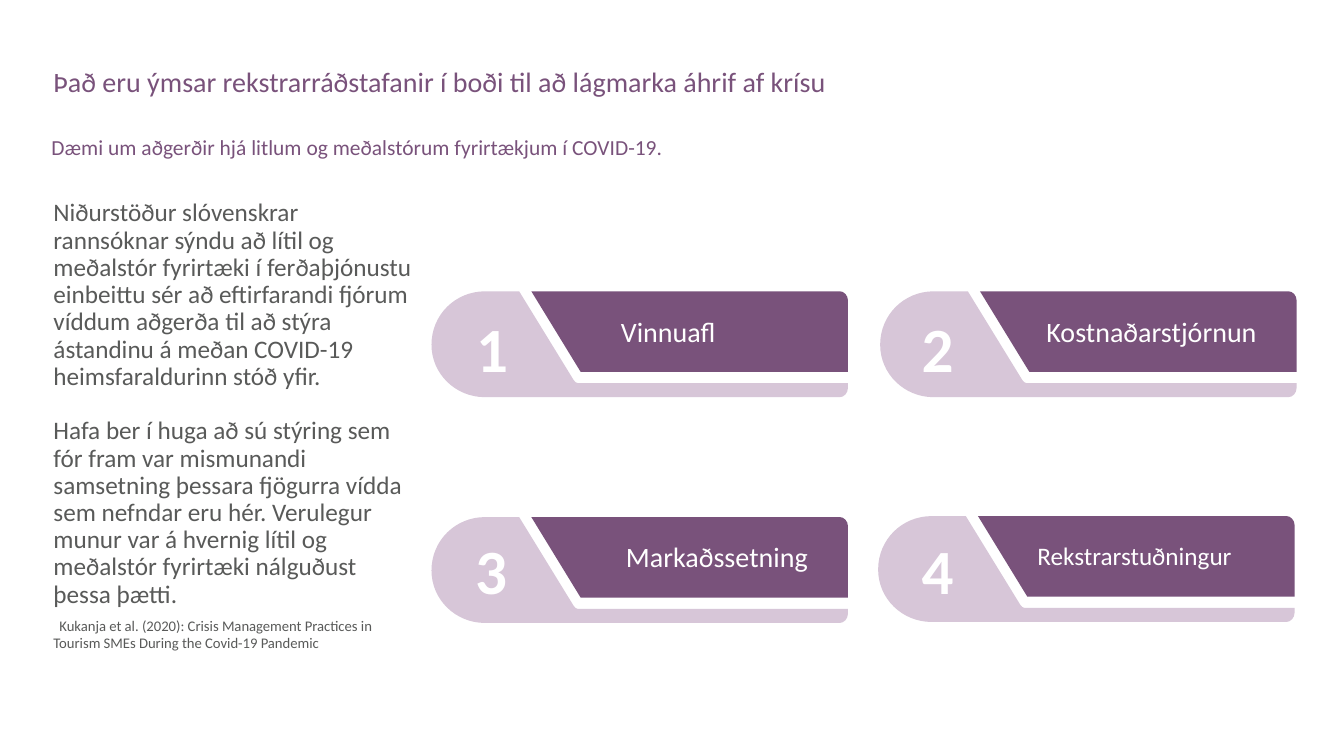
from dataclasses import dataclass

from pptx import Presentation
from pptx.dml.color import RGBColor
from pptx.enum.text import MSO_ANCHOR, MSO_AUTO_SIZE, PP_ALIGN
from pptx.oxml.ns import qn
from pptx.util import Inches, Pt

TOP = MSO_ANCHOR.TOP
MIDDLE = MSO_ANCHOR.MIDDLE
LEFT = PP_ALIGN.LEFT
CENTER = PP_ALIGN.CENTER
NO_FIT = MSO_AUTO_SIZE.NONE
TWO_CONTENT = 3


@dataclass(frozen=True)
class Theme:
    font: str = "Calibri"
    plum: RGBColor = RGBColor(0x79, 0x52, 0x7B)
    lilac: RGBColor = RGBColor(0xD7, 0xC6, 0xD8)
    gray: RGBColor = RGBColor(0x59, 0x5A, 0x59)
    white: RGBColor = RGBColor(0xFF, 0xFF, 0xFF)
    title: float = 20
    lead: float = 15.3
    body: float = 18
    source: float = 10.5
    digit: float = 45
    label: float = 20
    small: float = 18


THEME = Theme()

TITLE = "Það eru ýmsar rekstrarráðstafanir í boði til að lágmarka áhrif af krísu"
LEAD = "Dæmi um aðgerðir hjá litlum og meðalstórum fyrirtækjum í COVID-19."
BODY = [
    "Niðurstöður slóvenskrar rannsóknar sýndu að lítil og meðalstór fyrirtæki "
    "í ferðaþjónustu einbeittu sér að eftirfarandi fjórum víddum aðgerða til "
    "að stýra ástandinu á meðan COVID-19 heimsfaraldurinn stóð yfir.",
    "Hafa ber í huga að sú stýring sem fór fram var mismunandi samsetning "
    "þessara fjögurra vídda sem nefndar eru hér. Verulegur munur var á hvernig "
    "lítil og meðalstór fyrirtæki nálguðust þessa þætti.",
]
SOURCE = (
    "Kukanja et al. (2020): Crisis Management Practices in "
    "Tourism SMEs During the Covid-19 Pandemic"
)
CARDS = [
    ("Vinnuafl", (4.28, 2.89), (4.62, 3.02), (6.06, 3.07), THEME.label),
    ("Kostnaðarstjórnun", (8.73, 2.89), (9.04, 3.02), (10.28, 3.07), THEME.label),
    ("Markaðssetning", (4.28, 5.13), (4.61, 5.22), (6.11, 5.3), THEME.label),
    ("Rekstrarstuðningur", (8.71, 5.12), (9.04, 5.22), (10.19, 5.31), THEME.small),
]
BASE = [
    [(1.45, 0.91)],
    [(1.44, 0.91), (1.42, 0.9), (1.41, 0.88)],
    [(0.87, 0)],
    [(0.53, 0)],
    [(0.24, 0), (0, 0.23), (0, 0.53)],
    [(0, 0.82), (0.24, 1.05), (0.53, 1.05)],
    [(4.05, 1.05)],
    [(4.09, 1.05), (4.13, 1.01), (4.13, 0.96)],
    [(4.13, 0.91)],
]
TAB = [
    [(1.48, 0.8)],
    [(4.13, 0.8)],
    [(4.13, 0.09)],
    [(4.13, 0.04), (4.09, 0), (4.05, 0)],
    [(0.99, 0)],
]


def place(shape, left, top, width, height):
    shape.left, shape.top = Inches(left), Inches(top)
    shape.width, shape.height = Inches(width), Inches(height)


def write(para, text, size, color, bold=False, align=LEFT):
    para.alignment = align
    run = para.add_run()
    run.text = text
    run.font.name = THEME.font
    run.font.size = Pt(size)
    run.font.bold = bold
    run.font.color.rgb = color


def plain(para, line, before=0, indent=0):
    props = para._p.get_or_add_pPr()
    props.set("marL", "0")
    props.set("indent", str(Inches(indent)))
    props.append(props.makeelement(qn("a:buNone"), {}))
    para.line_spacing = line
    para.space_before = Pt(before)


def set_frame(shape, anchor):
    frame = shape.text_frame
    frame.word_wrap = True
    frame.auto_size = NO_FIT
    frame.vertical_anchor = anchor
    return frame


def add_head(shape, box, text, size, line):
    place(shape, *box)
    para = set_frame(shape, TOP).paragraphs[0]
    plain(para, line)
    write(para, text, size, THEME.plum)


def add_body(shape):
    place(shape, 0.43, 1.79, 3.83, 4.87)
    frame = set_frame(shape, MIDDLE)
    first = frame.paragraphs[0]
    plain(first, 0.9)
    write(first, BODY[0], THEME.body, THEME.gray)
    second = frame.add_paragraph()
    plain(second, 0.9, before=19.5)
    write(second, BODY[1], THEME.body, THEME.gray)
    cite = frame.add_paragraph()
    plain(cite, 1, before=5.5, indent=0.06)
    write(cite, SOURCE, THEME.source, THEME.gray)


def add_text(slide, box, text, size, bold=False, align=LEFT):
    shape = slide.shapes.add_textbox(*map(Inches, box))
    frame = set_frame(shape, TOP)
    write(frame.paragraphs[0], text, size, THEME.white, bold, align)


def bend(shape, steps):
    lines = iter(list(shape._element.iter(qn("a:lnTo"))))
    for step in steps:
        group = [next(lines) for _ in step]
        if len(group) == 3:
            curve = group[0].makeelement(qn("a:cubicBezTo"), {})
            group[0].addprevious(curve)
            for line in group:
                curve.append(line[0])
                line.getparent().remove(line)


def add_form(slide, corner, steps, color):
    left, top = corner
    spots = [(Inches(left + x), Inches(top + y)) for step in steps for x, y in step]
    form = slide.shapes.build_freeform(*spots[0])
    form.add_line_segments(spots[1:], close=True)
    shape = form.convert_to_shape()
    bend(shape, steps[1:])
    shape.shadow.inherit = False
    shape.fill.solid()
    shape.fill.fore_color.rgb = color
    shape.line.fill.background()


def add_card(slide, number, label, corner, digit, spot, size):
    add_form(slide, corner, BASE, THEME.lilac)
    add_form(slide, corner, TAB, THEME.plum)
    add_text(slide, (*digit, 0.52, 0.86), str(number), THEME.digit, True, CENTER)
    add_text(slide, (*spot, 2.69, 0.44), label, size)


def main():
    deck = Presentation()
    deck.slide_width, deck.slide_height = Inches(13.33), Inches(7.5)
    slide = deck.slides.add_slide(deck.slide_layouts[TWO_CONTENT])
    title, body, lead = list(slide.placeholders)[:3]
    add_head(title, (0.43, 0.63, 12.54, 0.64), TITLE, THEME.title, 0.9)
    add_head(lead, (0.41, 1.35, 12.56, 0.28), LEAD, THEME.lead, 0.7)
    add_body(body)
    for number, card in enumerate(CARDS, 1):
        add_card(slide, number, *card)
    deck.save("out.pptx")


if __name__ == "__main__":
    main()
